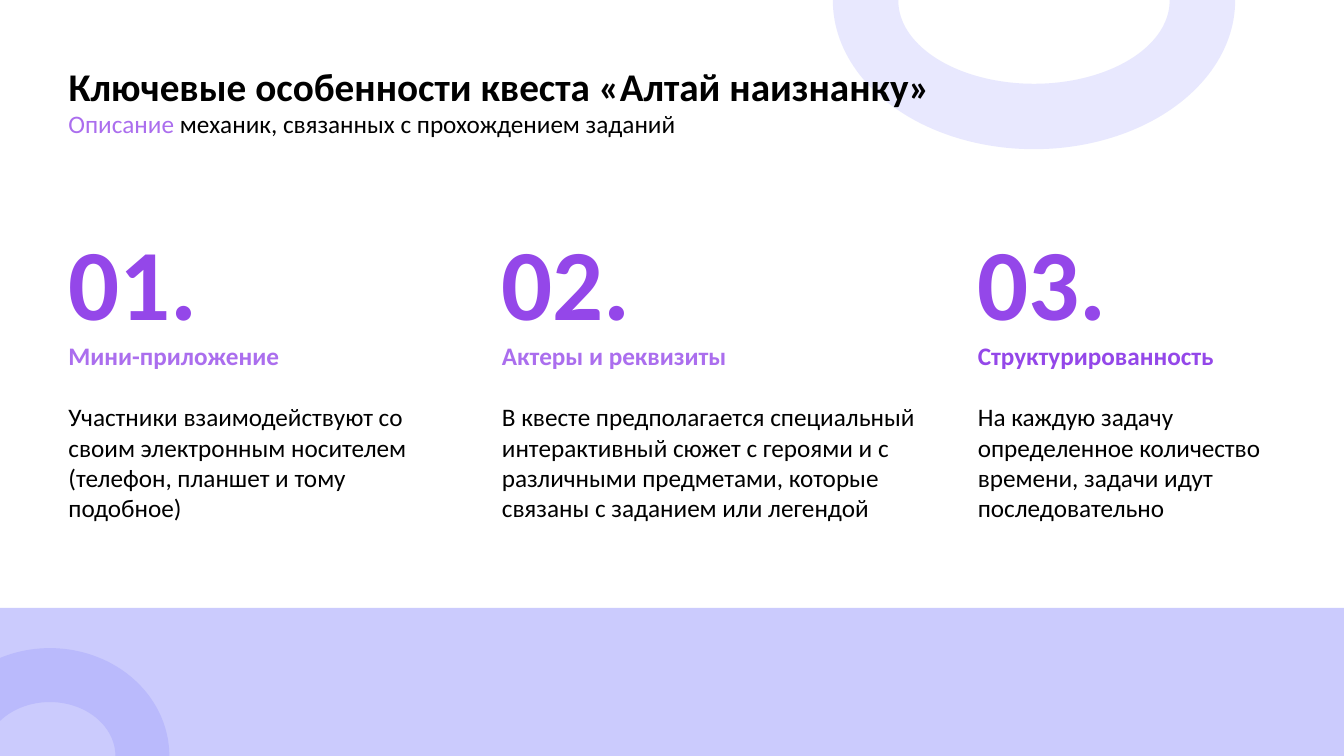
from pptx import Presentation
from pptx.dml.color import RGBColor
from pptx.enum.shapes import MSO_SHAPE as Preset
from pptx.enum.text import MSO_ANCHOR as Anchor, PP_ALIGN as Align
from pptx.util import Inches, Pt

COLORS = {
    "black": "000000",
    "violet": "9447E9",
    "light_violet": "AB6EEE",
    "pale_ring": "E8E8FE",
    "band": "CBCBFD",
    "band_ring": "BABAFC",
}
LEFT = 0.58

presentation = Presentation()
presentation.slide_width = Inches(13.33)
presentation.slide_height = Inches(7.5)
slide = presentation.slides.add_slide(presentation.slide_layouts[5])


def add_decoration(preset, left, top, width, height, color):
    shape = slide.shapes.add_shape(
        preset, Inches(left), Inches(top), Inches(width), Inches(height))
    shape.shadow.inherit = False
    shape.fill.solid()
    shape.fill.fore_color.rgb = RGBColor.from_string(COLORS[color])
    shape.line.fill.background()
    return shape


def add_text(paragraph, text, size, color, bold=False):
    paragraph.alignment = Align.LEFT
    run = paragraph.add_run()
    run.text = text
    run.font.name = "Calibri"
    run.font.size = Pt(size)
    run.font.bold = bold
    run.font.color.rgb = RGBColor.from_string(COLORS[color])


# Background rings and bottom band
top_ring = add_decoration(Preset.BLOCK_ARC, 8.26, -1.47, 3.99, 2.95, "pale_ring")
top_ring.rotation = 180
for index, value in enumerate((101.16, 6.33, 0.22)):
    top_ring.adjustments[index] = value
add_decoration(Preset.RECTANGLE, 0, 6.03, 13.33, 1.47, "band")
add_decoration(Preset.BLOCK_ARC, -0.69, 6.43, 2.37, 2.14, "band_ring")

# Title, brought in front of the ring
title = slide.shapes.title
slide.shapes._spTree.append(title._element)
title.left, title.top = Inches(LEFT), Inches(0.57)
title.width, title.height = Inches(11.68), Inches(0.57)
title.text_frame.vertical_anchor = Anchor.TOP
add_text(title.text_frame.paragraphs[0],
         "Ключевые особенности квеста «Алтай наизнанку»", 28, "black", True)

# Subtitle
subtitle = slide.shapes.add_textbox(Inches(LEFT), Inches(1.03), Inches(7.87), Inches(0.4))
subtitle.text_frame.word_wrap = True
paragraph = subtitle.text_frame.paragraphs[0]
add_text(paragraph, "Описание", 18, "light_violet")
add_text(paragraph, " механик, связанных с прохождением заданий", 18, "black")

# Three numbered features
features = [
    (LEFT, 3.65, "light_violet", "Мини-приложение",
     "Участники взаимодействуют со своим электронным носителем "
     "(телефон, планшет и тому подобное)"),
    (4.88, 4.33, "light_violet", "Актеры и реквизиты",
     "В квесте предполагается специальный интерактивный сюжет с героями и с "
     "различными предметами, которые связаны с заданием или легендой"),
    (9.6, 3.35, "violet", "Структурированность",
     "На каждую задачу определенное количество времени, "
     "задачи идут последовательно"),
]
for number, (left, width, color, heading, description) in enumerate(features, 1):
    box = slide.shapes.add_textbox(Inches(left), Inches(2.13), Inches(width), Inches(3.13))
    frame = box.text_frame
    frame.word_wrap = True
    add_text(frame.paragraphs[0], f"{number:02}.", 72, "violet", True)
    add_text(frame.add_paragraph(), heading, 18, color, True)
    paragraph = frame.add_paragraph()
    paragraph.space_before = Pt(22)
    add_text(paragraph, description, 18, "black")

presentation.save("out.pptx")
